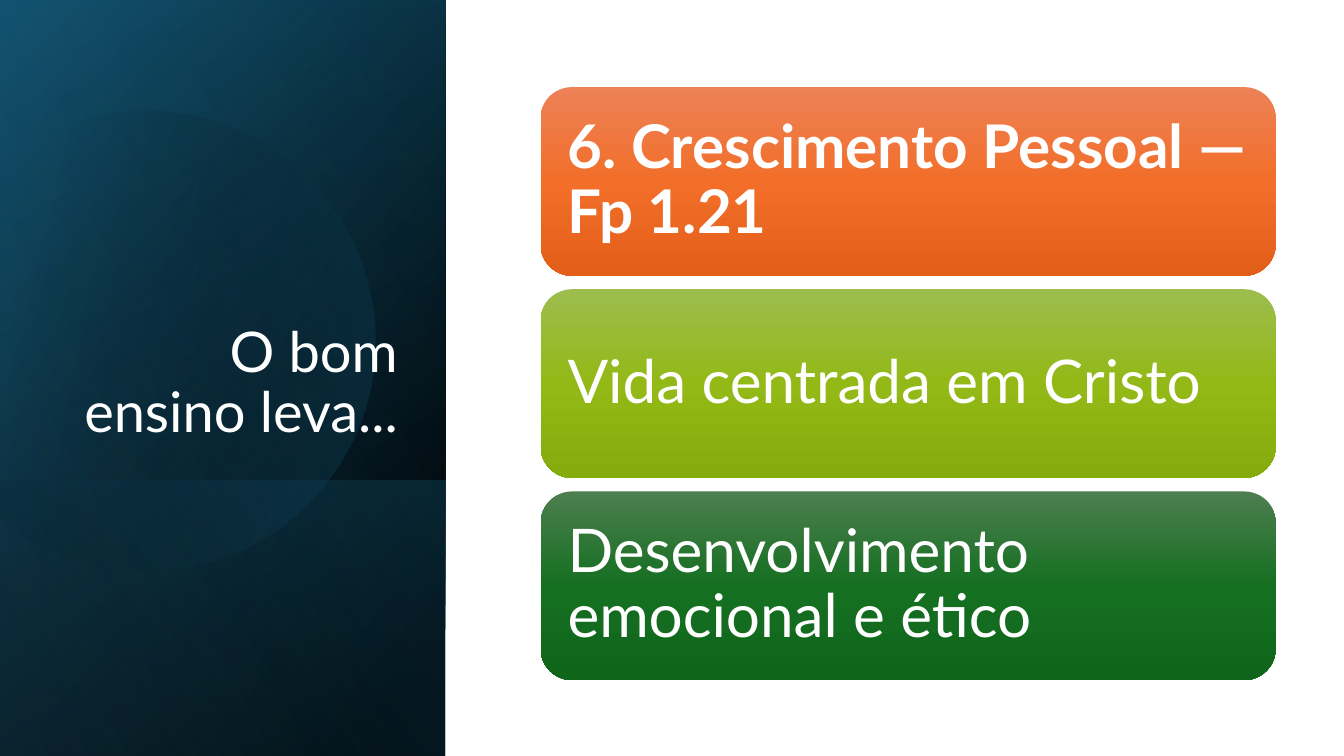
from dataclasses import dataclass
from itertools import pairwise
from math import cos, radians, sin, tan

from pptx import Presentation
from pptx import oxml, util as u
from pptx.enum import shapes, text
from pptx.dml.color import RGBColor
from pptx.oxml import ns

Pt = u.Pt
COLORS = {
    "white": "FFFFFF", "black": "000000", "navy": "104862", "teal": "156082", "sky": "46B1E1",
    "orange_top": "ED8257", "orange": "F26E29", "orange_end": "E25F1A",
    "lime_top": "9CBD4E", "lime": "92B916", "lime_end": "85AB0D",
    "green_top": "4D7E50", "green": "156F21", "green_end": "0F661B",
}
FONT = "Lato"
SLIDE_W, SLIDE_H = 960, 540
PANEL_W = 318.24
CARD_LEFT, CARD_TOP, CARD_W, CARD_H, CARD_STEP = 386.2, 62.2, 525, 134.8, 144.4
DISC_X, DISC_Y, DISC_R, DISC_TURN = 103.3, 240.8, 164.5, 343.9
DISC_ANGLES = [-117.8, -90, 0, 90, 150]


@dataclass
class Stop:
    pos: int
    color: str
    alpha: int = 100


@dataclass
class Layer:
    top: float
    height: float
    angle: int
    stops: list[Stop]


@dataclass
class Card:
    label: str
    hue: str
    bold: bool = False


BASE = Layer(0, SLIDE_H, 50, [Stop(8, "black"), Stop(100, "navy")])
WASHES = [
    Layer(0, SLIDE_H, 30, [Stop(0, "black", 0), Stop(99, "teal", 46)]),
    Layer(343.4, 197.3, 130, [Stop(2, "teal", 29), Stop(100, "black", 30)]),
]
GLOW = Layer(0, SLIDE_H, 120, [Stop(0, "black", 0), Stop(99, "sky", 11)])
CARDS = [
    Card("6. Crescimento Pessoal — Fp 1.21", "orange", True),
    Card("Vida centrada em Cristo", "lime"),
    Card("Desenvolvimento emocional e ético", "green"),
]


def paint(sp, stops: list[Stop], angle: float) -> None:
    """Give a shape a linear gradient and no line or shadow."""
    sp.shadow.inherit = False
    sp.line.fill.background()
    sp.fill.background()
    gs = "".join(
        f'<a:gs pos="{s.pos * 1000}"><a:srgbClr val="{COLORS[s.color]}">'
        f'<a:alpha val="{s.alpha * 1000}"/></a:srgbClr></a:gs>'
        for s in stops
    )
    grad = oxml.parse_xml(
        f'<a:gradFill {ns.nsdecls("a")} rotWithShape="1"><a:gsLst>{gs}</a:gsLst>'
        f'<a:lin ang="{int(angle * 60000)}" scaled="0"/></a:gradFill>'
    )
    sp_pr = sp.element.spPr
    sp_pr.replace(sp_pr.find(ns.qn("a:noFill")), grad)


def add_layer(s, layer: Layer) -> None:
    """Draw a full-width panel layer as a mirrored rectangle turned by 90 degrees."""
    shift = (PANEL_W - layer.height) / 2
    sp = s.shapes.add_shape(shapes.MSO_SHAPE.RECTANGLE, Pt(shift), Pt(layer.top - shift),
                            Pt(layer.height), Pt(PANEL_W))
    sp.rotation = 90
    sp.element.spPr.find(ns.qn("a:xfrm")).set("flipH", "1")
    paint(sp, layer.stops, layer.angle)


def disc_point(angle: float, pull: float = 0) -> tuple[int, int]:
    """Return a point of the disc's edge, shifted along the tangent by a share of the radius."""
    a = radians(angle)
    return (Pt(DISC_X + DISC_R * (cos(a) - pull * sin(a))),
            Pt(DISC_Y + DISC_R * (sin(a) + pull * cos(a))))


def add_disc(s) -> None:
    """Draw the translucent disc from curves, cut off along its left side."""
    points = []
    for a, b in pairwise(DISC_ANGLES):
        pull = 4 / 3 * tan(radians(b - a) / 4)
        points += [disc_point(a, pull), disc_point(b, -pull), disc_point(b)]
    builder = s.shapes.build_freeform(*disc_point(DISC_ANGLES[0]))
    builder.add_line_segments(points, close=True)
    sp = builder.convert_to_shape()
    lines = list(sp.element.iter(ns.qn("a:lnTo")))
    for i in range(0, len(points), 3):
        curve = oxml.parse_xml(f'<a:cubicBezTo {ns.nsdecls("a")}/>')
        lines[i].addprevious(curve)
        for line in lines[i:i + 3]:
            curve.append(line[0])
            line.getparent().remove(line)
    sp.rotation = DISC_TURN
    paint(sp, [Stop(29, "black", 0), Stop(100, "teal", 43)], 30)


def write(tf, words: str, size: float, align, anchor, bold: bool = False) -> None:
    """Write one white paragraph into a text frame."""
    tf.word_wrap = True
    tf.auto_size = text.MSO_AUTO_SIZE.NONE
    tf.vertical_anchor = anchor
    p = tf.paragraphs[0]
    p.alignment = align
    p.line_spacing = 0.9
    r = p.add_run()
    r.text = words
    r.font.name = FONT
    r.font.size = Pt(size)
    r.font.bold = bold
    r.font.color.rgb = RGBColor.from_string(COLORS["white"])


def add_title(s, words: str) -> None:
    """Place the slide title over the panel."""
    sp = s.shapes.title
    sp.left, sp.top, sp.width, sp.height = Pt(45.8), Pt(132.7), Pt(245.5), Pt(188.6)
    write(sp.text_frame, words, 40, text.PP_ALIGN.RIGHT, text.MSO_ANCHOR.BOTTOM)
    sp.element.getparent().append(sp.element)


def add_card(s, card: Card, row: int) -> None:
    """Draw one rounded card of the stack."""
    sp = s.shapes.add_shape(shapes.MSO_SHAPE.ROUNDED_RECTANGLE, Pt(CARD_LEFT),
                            Pt(CARD_TOP + row * CARD_STEP), Pt(CARD_W), Pt(CARD_H))
    paint(sp, [Stop(0, f"{card.hue}_top"), Stop(50, card.hue), Stop(100, f"{card.hue}_end")], 90)
    tf = sp.text_frame
    tf.margin_left = tf.margin_right = tf.margin_top = tf.margin_bottom = Pt(12.6)
    write(tf, card.label, 43, text.PP_ALIGN.LEFT, text.MSO_ANCHOR.MIDDLE, card.bold)


def main() -> None:
    """Build and save the slide."""
    prs = Presentation()
    prs.slide_width, prs.slide_height = Pt(SLIDE_W), Pt(SLIDE_H)
    s = prs.slides.add_slide(prs.slide_layouts[5])
    for layer in [BASE, *WASHES]:
        add_layer(s, layer)
    add_disc(s)
    add_layer(s, GLOW)
    add_title(s, "O bom ensino leva...")
    for row, card in enumerate(CARDS):
        add_card(s, card, row)
    prs.save("out.pptx")


if __name__ == "__main__":
    main()
